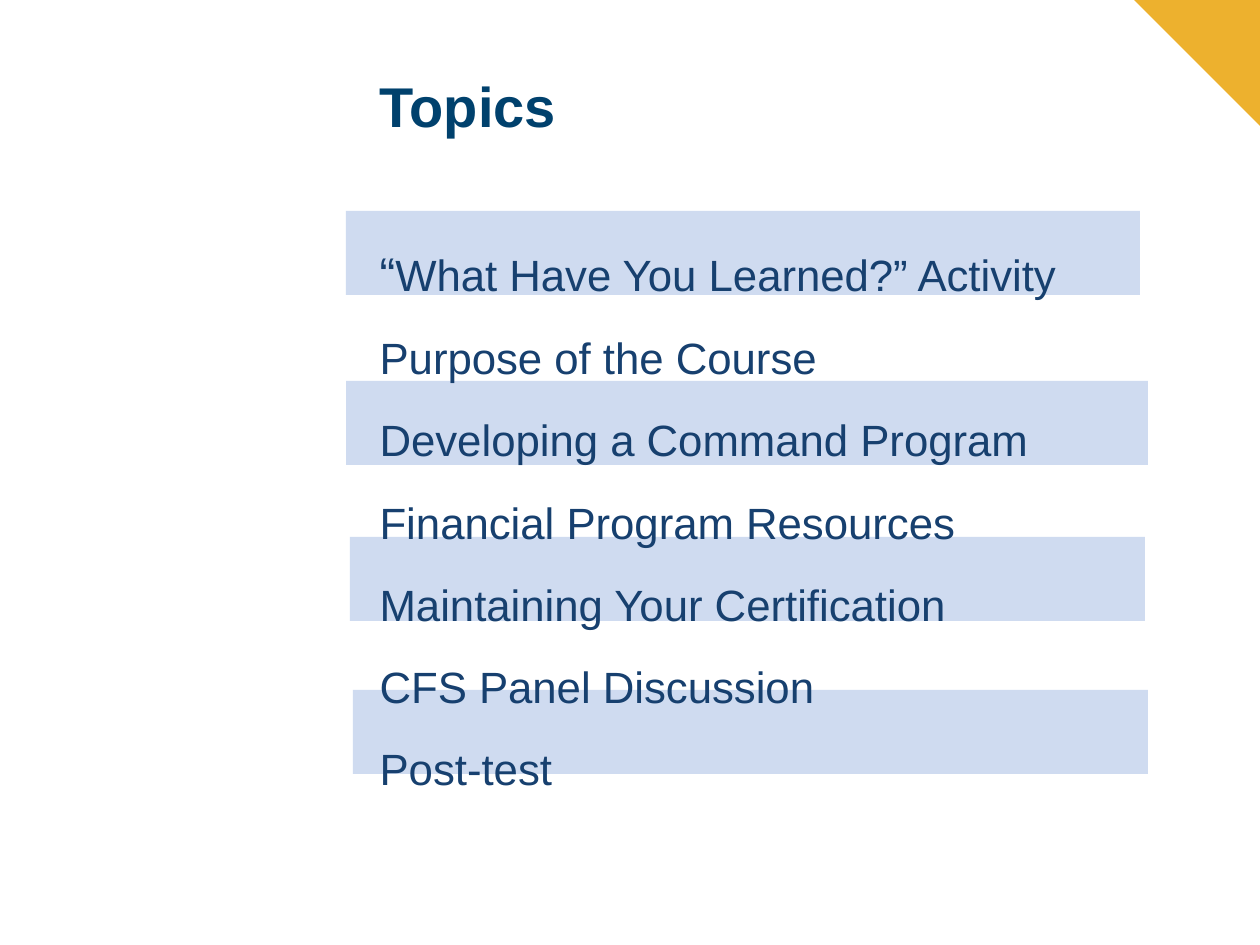
from dataclasses import dataclass

from lxml.etree import SubElement
from pptx import Presentation
from pptx.dml.color import RGBColor
from pptx.enum.shapes import MSO_SHAPE
from pptx.enum.text import MSO_ANCHOR, MSO_AUTO_SIZE, PP_ALIGN
from pptx.oxml.ns import qn
from pptx.util import Pt

EMU_PER_PX = 914400 // 126
SLIDE_SIZE = (1260, 945)

TITLE = "Topics"
TOPICS = [
    "“What Have You Learned?” Activity",
    "Purpose of the Course",
    "Developing a Command Program",
    "Financial Program Resources",
    "Maintaining Your Certification",
    "CFS Panel Discussion",
    "Post-test",
]

# Left, top, width, height in px
TITLE_BOX = (367, 69, 673, 92)
TOPICS_BOX = (367, 204, 914, 566)
CORNER_BOX = (1134, 0, 126, 126)
BAND_HEIGHT = 84
BANDS = [(346, 211, 794), (346, 381, 802), (350, 537, 795), (353, 690, 795)]


@dataclass(frozen=True)
class Theme:
    font: str = "Arial"
    title: str = "00416D"
    text: str = "17406F"
    band: str = "CFDBF0"
    corner: str = "EDB12E"
    title_size: int = 32
    quote_size: int = 27
    topic_size: int = 25


THEME = Theme()


def px(*lengths):
    return [length * EMU_PER_PX for length in lengths]


def add_filled_shape(slide, preset, box, color):
    shape = slide.shapes.add_shape(preset, *px(*box))
    shape.shadow.inherit = False
    shape.fill.solid()
    shape.fill.fore_color.rgb = RGBColor.from_string(color)
    shape.line.fill.background()
    return shape


def place_placeholder(shape, box, top_inset):
    """Position a placeholder in front of the shapes added so far."""
    shape.left, shape.top, shape.width, shape.height = px(*box)
    frame = shape.text_frame
    frame.auto_size = MSO_AUTO_SIZE.NONE
    frame.word_wrap = True
    frame.vertical_anchor = MSO_ANCHOR.TOP
    frame.margin_top = px(top_inset)[0]
    shape.element.getparent().append(shape.element)
    return frame


def write_paragraph(paragraph, text, *, size, color, bold=False,
                    line_spacing=1.0, space_before=0, first_size=None):
    """Write text; first_size, if given, applies to its first character."""
    properties = paragraph._p.get_or_add_pPr()
    properties.set("marL", "0")
    properties.set("indent", "0")
    SubElement(properties, qn("a:buNone"))
    paragraph.alignment = PP_ALIGN.LEFT
    paragraph.line_spacing = line_spacing
    paragraph.space_before = Pt(space_before)
    pieces = [(text[:1], first_size), (text[1:], size)] if first_size else [(text, size)]
    for piece, piece_size in pieces:
        run = paragraph.add_run()
        run.text = piece
        run.font.name = THEME.font
        run.font.size = Pt(piece_size)
        run.font.bold = bold
        run.font.color.rgb = RGBColor.from_string(color)


def main():
    presentation = Presentation()
    presentation.slide_width, presentation.slide_height = px(*SLIDE_SIZE)
    slide = presentation.slides.add_slide(presentation.slide_layouts[1])

    corner = add_filled_shape(slide, MSO_SHAPE.RIGHT_TRIANGLE, CORNER_BOX, THEME.corner)
    corner.rotation = 180
    for left, top, width in BANDS:
        add_filled_shape(slide, MSO_SHAPE.RECTANGLE,
                         (left, top, width, BAND_HEIGHT), THEME.band)

    title_frame = place_placeholder(slide.shapes.title, TITLE_BOX, top_inset=10)
    write_paragraph(title_frame.paragraphs[0], TITLE, size=THEME.title_size,
                    color=THEME.title, bold=True, line_spacing=0.9)

    topics_frame = place_placeholder(slide.placeholders[1], TOPICS_BOX, top_inset=12)
    for index, topic in enumerate(TOPICS):
        paragraph = topics_frame.add_paragraph() if index else topics_frame.paragraphs[0]
        write_paragraph(paragraph, topic, size=THEME.topic_size, color=THEME.text,
                        line_spacing=1.5, space_before=2 if index else 0,
                        first_size=THEME.quote_size if topic.startswith("“") else None)

    presentation.save("out.pptx")


if __name__ == "__main__":
    main()
